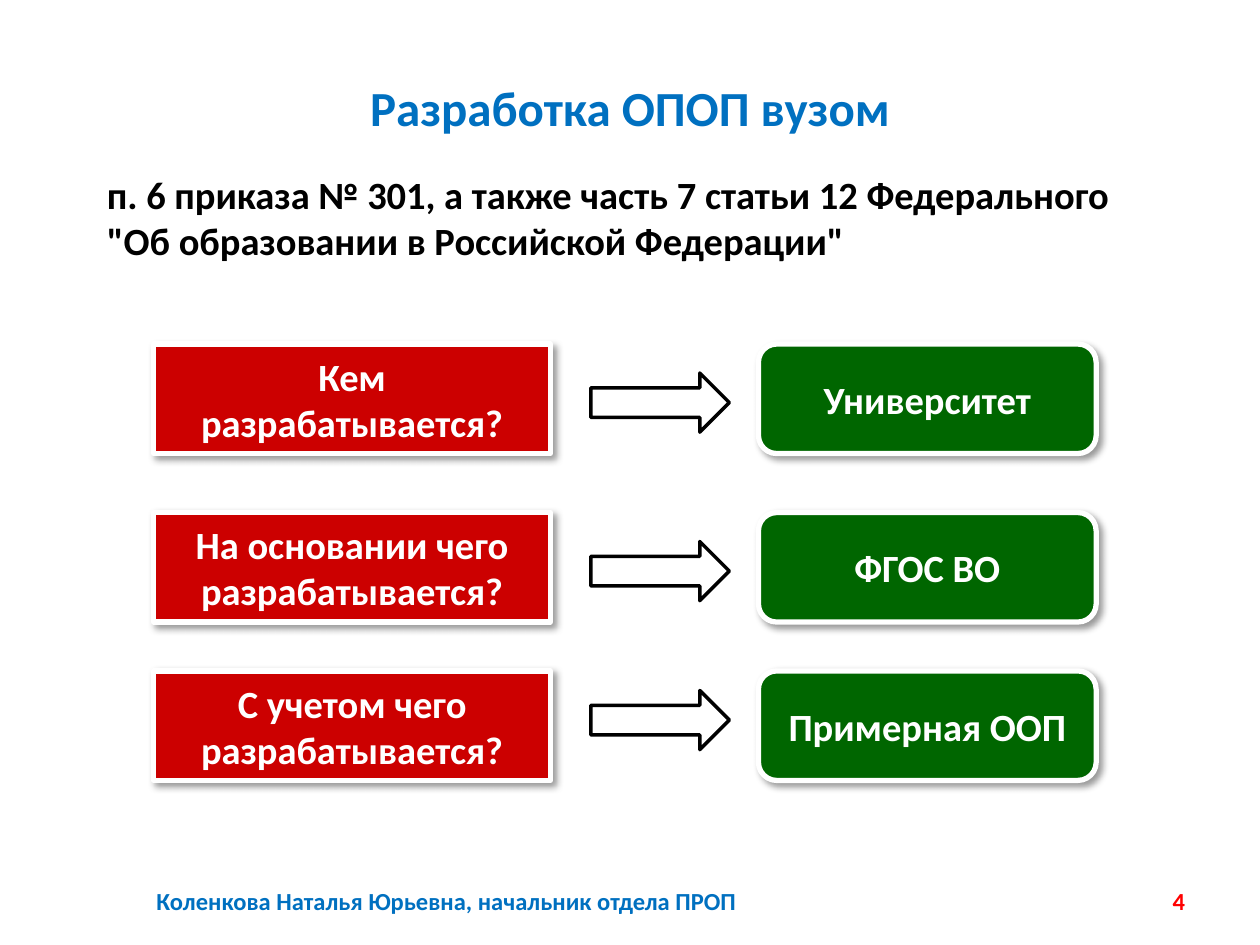
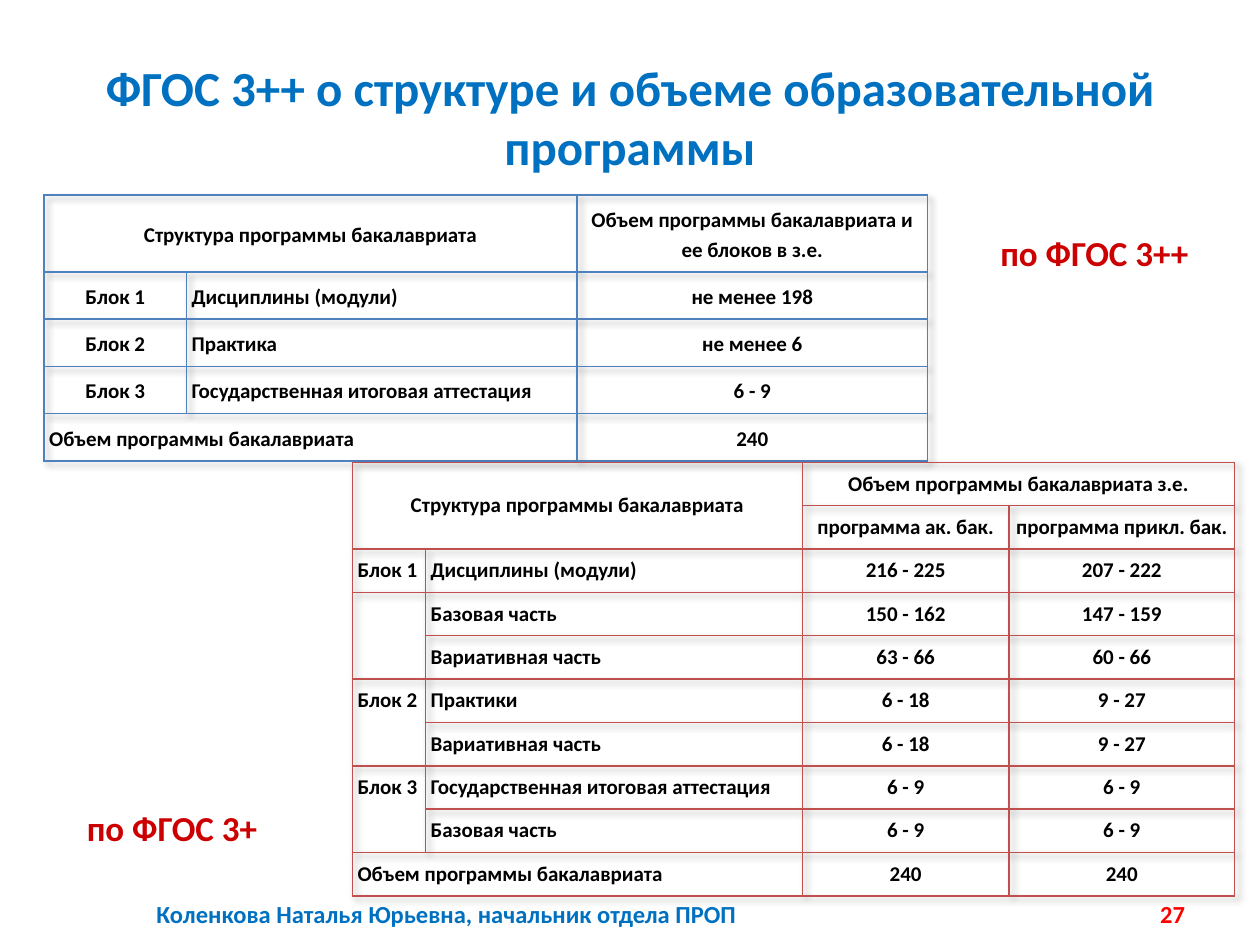
from lxml import etree
from pptx import Presentation
from pptx.dml.color import RGBColor
from pptx.enum import shapes, text
from pptx.oxml import ns
from pptx.util import Pt

COLORS = {
    "title": "0070C0", "number": "FF0000", "question": "CC0000",
    "answer": "006600", "label": "CC0000", "white": "FFFFFF",
    "black": "000000", "new_grid": "4F81BD", "old_grid": "C0504D",
}
FONT = "Calibri"
SLIDE_SIZE = (720, 540)
AUTHOR = "Коленкова Наталья Юрьевна, начальник отдела ПРОП"
NO_TABLE_STYLE = "{2D5ABB26-0587-4C30-8999-92F81FD0307C}"
LEFT, CENTER, RIGHT = text.PP_ALIGN.LEFT, text.PP_ALIGN.CENTER, text.PP_ALIGN.RIGHT
TOP, MIDDLE = text.MSO_ANCHOR.TOP, text.MSO_ANCHOR.MIDDLE

NEW_STANDARD_ROWS = [
    ["Структура программы бакалавриата", "", "Объем программы бакалавриата и ее блоков в з.е."],
    ["Блок 1", "Дисциплины (модули)", "не менее 198"],
    ["Блок 2", "Практика", "не менее 6"],
    ["Блок 3", "Государственная итоговая аттестация", "6 - 9"],
    ["Объем программы бакалавриата", "", "240"],
]
OLD_STANDARD_ROWS = [
    ["Структура программы бакалавриата", "", "Объем программы бакалавриата з.е.", ""],
    ["", "", "программа ак. бак.", "программа прикл. бак."],
    ["Блок 1", "Дисциплины (модули)", "216 - 225", "207 - 222"],
    ["", "Базовая часть", "150 - 162", "147 - 159"],
    ["", "Вариативная часть", "63 - 66", "60 - 66"],
    ["Блок 2", "Практики", "6 - 18", "9 - 27"],
    ["", "Вариативная часть", "6 - 18", "9 - 27"],
    ["Блок 3", "Государственная итоговая аттестация", "6 - 9", "6 - 9"],
    ["", "Базовая часть", "6 - 9", "6 - 9"],
    ["Объем программы бакалавриата", "", "240", "240"],
]


def color(name):
    return RGBColor.from_string(COLORS[name])


def points(box):
    return [Pt(length) for length in box]


def write(paragraph, words, size, color_name, align):
    paragraph.text = words
    paragraph.alignment = align
    font = paragraph.font
    font.name, font.size, font.bold = FONT, Pt(size), True
    font.color.rgb = color(color_name)


def add_text(slide, box, words, size, color_name, align=LEFT, anchor=TOP):
    frame = slide.shapes.add_textbox(*points(box)).text_frame
    frame.word_wrap = True
    frame.vertical_anchor = anchor
    write(frame.paragraphs[0], words, size, color_name, align)


def add_shadow(properties, position):
    """Put a soft shadow, falling to the lower right, among the XML properties."""
    effects = etree.Element(ns.qn("a:effectLst"))
    shadow = etree.SubElement(effects, ns.qn("a:outerShdw"), blurRad=str(Pt(4)),
                              dist=str(Pt(3)), dir="2700000", algn="tl", rotWithShape="0")
    shade = etree.SubElement(shadow, ns.qn("a:srgbClr"), val=COLORS["black"])
    etree.SubElement(shade, ns.qn("a:alpha"), val="40000")
    properties.insert(position, effects)


def add_frame(slide, title, title_height, number, footer_top):
    """Add the title, the author line and the slide number."""
    add_text(slide, (36, 21.6, 648, title_height), title, 28, "title", CENTER, MIDDLE)
    add_text(slide, (36.7, footer_top, 437, 28.8), AUTHOR, 14, "title", CENTER, MIDDLE)
    add_text(slide, (516.2, footer_top, 168, 28.8), number, 14, "number", RIGHT, MIDDLE)


def add_outlined_shape(slide, kind, box, fill, line, line_width):
    shape = slide.shapes.add_shape(kind, *points(box))
    shape.shadow.inherit = False
    shape.fill.solid()
    shape.fill.fore_color.rgb = color(fill)
    shape.line.color.rgb = color(line)
    shape.line.width = Pt(line_width)
    return shape


def add_card(slide, kind, box, fill, words):
    shape = add_outlined_shape(slide, kind, box, fill, "white", 3)
    properties = shape._element.spPr
    properties.remove(properties.find(ns.qn("a:effectLst")))
    add_shadow(properties, len(properties))
    shape.text_frame.word_wrap = True
    shape.text_frame.vertical_anchor = MIDDLE
    write(shape.text_frame.paragraphs[0], words, 22, "white", CENTER)


def add_question_row(slide, box, question, answer, arrow_drop):
    left, top, width, height = box
    kinds = shapes.MSO_SHAPE
    answer_width = 193
    add_card(slide, kinds.RECTANGLE, (left, top, 226.8, height), "question", question)
    add_card(slide, kinds.ROUNDED_RECTANGLE,
             (left + width - answer_width, top, answer_width, height), "answer", answer)
    add_outlined_shape(slide, kinds.RIGHT_ARROW, (left + 249.8, top + arrow_drop, 79.2, 33.8),
                       "white", "black", 2)


def border_cell(cell, grid_color):
    properties = cell._tc.get_or_add_tcPr()
    for position, side in enumerate(("a:lnL", "a:lnR", "a:lnT", "a:lnB")):
        line = etree.Element(ns.qn(side), w=str(Pt(1)))
        fill = etree.SubElement(line, ns.qn("a:solidFill"))
        etree.SubElement(fill, ns.qn("a:srgbClr"), val=COLORS[grid_color])
        properties.insert(position, line)


def add_structure_table(slide, origin, widths, heights, rows, merges, grid_color,
                        header_rows, block_align, line_spacing):
    """Add a programme table; the first two columns name the blocks and their parts."""
    box = (*origin, sum(widths), sum(heights))
    table = slide.shapes.add_table(len(rows), len(widths), *points(box)).table
    table.first_row = table.horz_banding = False
    properties = table._tbl.tblPr
    properties.find(ns.qn("a:tableStyleId")).text = NO_TABLE_STYLE
    add_shadow(properties, 0)
    for column, width in zip(table.columns, widths):
        column.width = Pt(width)
    for r, (row, height) in enumerate(zip(rows, heights)):
        table.rows[r].height = Pt(height)
        is_header = r < header_rows
        is_total = r == len(rows) - 1
        for c, words in enumerate(row):
            cell = table.cell(r, c)
            cell.fill.background()
            border_cell(cell, grid_color)
            cell.margin_left = cell.margin_right = Pt(2.9)
            cell.margin_top = cell.margin_bottom = Pt(5)
            cell.vertical_anchor = MIDDLE if is_header else TOP
            if is_header or c > 1:
                align = CENTER
            else:
                align = block_align if c == 0 and not is_total else LEFT
            paragraph = cell.text_frame.paragraphs[0]
            write(paragraph, words, 12, "black", align)
            paragraph.line_spacing = line_spacing
    for first, last in merges:
        table.cell(*first).merge(table.cell(*last))


def build_development_slide(slide):
    add_frame(slide, "Разработка ОПОП вузом", 78.5, "4", 500.4)
    add_text(slide, (54, 94.3, 623.5, 60.5),
             'п. 6 приказа № 301, а также часть 7 статьи 12 Федерального '
             '"Об образовании в Российской Федерации"', 22, "black")
    question_rows = [
        (196.6, "Кем разрабатывается?", "Университет", 16.6),
        (292.9, "На основании чего разрабатывается?", "ФГОС ВО", 16.6),
        (383.4, "С учетом чего разрабатывается?", "Примерная ООП", 11.2),
    ]
    for top, question, answer, arrow_drop in question_rows:
        add_question_row(slide, (87.8, top, 538.6, 62.6), question, answer, arrow_drop)


def build_structure_slide(slide):
    add_frame(slide, "ФГОС 3++ о структуре и объеме образовательной программы", 90, "27", 507.6)
    add_structure_table(
        slide, (25.2, 111.4), (81.4, 223.2, 200.2), [44] + [27] * 4, NEW_STANDARD_ROWS,
        [((0, 0), (0, 1)), ((4, 0), (4, 1))], "new_grid", 1, CENTER, 1.15)
    add_structure_table(
        slide, (201.4, 264.2), (41.8, 215.3, 118.1, 129), [24.8] * 10, OLD_STANDARD_ROWS,
        [((0, 0), (1, 1)), ((0, 2), (0, 3)), ((9, 0), (9, 1))]
        + [((r, 0), (r + 1, 0)) for r in (3, 5, 7)],
        "old_grid", 2, LEFT, 1.0)
    add_text(slide, (42.5, 457.2, 130.3, 41.8), "по ФГОС 3+", 20, "label")
    add_text(slide, (564.5, 128.9, 130.3, 41.8), "по ФГОС 3++", 20, "label")


def main():
    presentation = Presentation()
    presentation.slide_width, presentation.slide_height = points(SLIDE_SIZE)
    blank = presentation.slide_layouts[6]
    for build in (build_development_slide, build_structure_slide):
        build(presentation.slides.add_slide(blank))
    presentation.save("out.pptx")


if __name__ == "__main__":
    main()
